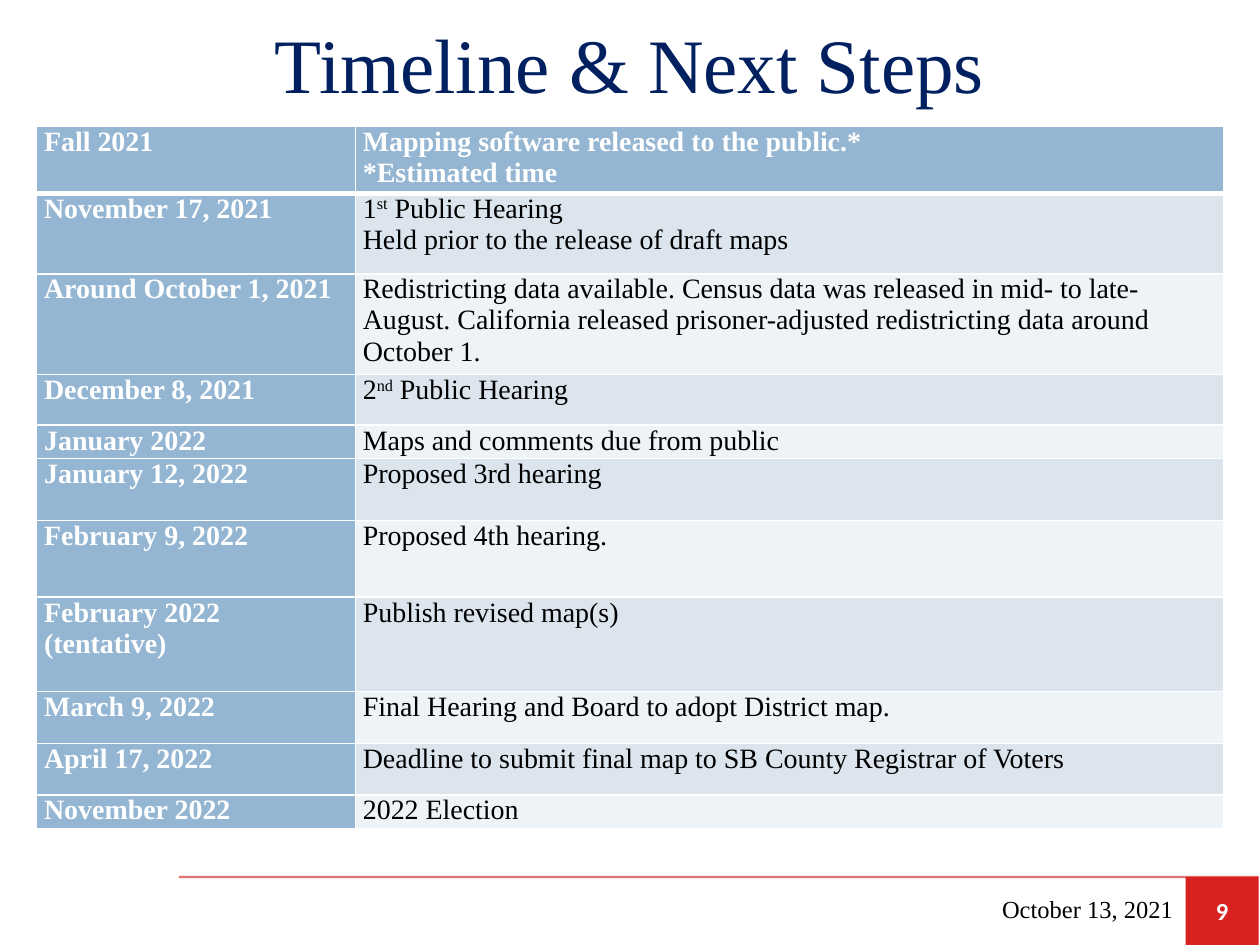
"""Build the redistricting timeline slide."""
from lxml.etree import SubElement
from pptx import Presentation
from pptx.dml.color import RGBColor
from pptx.enum.shapes import MSO_CONNECTOR, MSO_SHAPE
from pptx.enum.text import MSO_ANCHOR, PP_ALIGN
from pptx.oxml import parse_xml
from pptx.oxml.ns import nsdecls, qn
from pptx.util import Inches, Pt

SERIF = "Times New Roman"
WHITE, BLACK, NAVY, RED = "FFFFFF", "000000", "002060", "D92121"
HEADING_FILL = "94B6D2"
BAND_FILLS = ("EEF3F7", "DCE5EE")
COLUMN_WIDTHS = (2.53, 6.89)
TITLE = "Timeline & Next Steps"
MEETING_DATE = "October 13, 2021"
PAGE_NUMBER = "9"
MILESTONES = [
    (0.49, "Fall 2021", "Mapping software released to the public.*\n*Estimated time"),
    (0.64, "November 17, 2021",
     "1^st^ Public Hearing\nHeld prior to the release of draft maps"),
    (0.76, "Around October 1, 2021",
     "Redistricting data available. Census data was released in mid- to "
     "late-August. California released prisoner-adjusted redistricting data "
     "around October 1."),
    (0.4, "December 8, 2021", "2^nd^ Public Hearing"),
    (0.25, "January 2022", "Maps and comments due from public"),
    (0.49, "January 12, 2022", "Proposed 3rd hearing"),
    (0.61, "February 9, 2022", "Proposed 4th hearing."),
    (0.75, "February 2022 (tentative)", "Publish revised map(s)"),
    (0.41, "March 9, 2022", "Final Hearing and Board to adopt District map."),
    (0.41, "April 17, 2022",
     "Deadline to submit final map to SB County Registrar of Voters"),
    (0.25, "November 2022", "2022 Election"),
]


def rgb(color):
    return RGBColor.from_string(color)


def style(run, size, color, bold=False, face=SERIF):
    run.font.size = Pt(size)
    run.font.name = face
    run.font.bold = bold
    run.font.color.rgb = rgb(color)


def write_label(shape, words, align, size, color, bold=False, face=SERIF):
    frame = shape.text_frame
    frame.text = words
    frame.word_wrap = True
    frame.vertical_anchor = MSO_ANCHOR.MIDDLE
    frame.paragraphs[0].alignment = align
    style(frame.paragraphs[0].runs[0], size, color, bold, face)


def add_label(slide, place, *label):
    write_label(slide.shapes.add_textbox(*map(Inches, place)), *label)


def add_footer(slide):
    rule = slide.shapes.add_connector(
        MSO_CONNECTOR.STRAIGHT, Inches(1.42), Inches(6.96), Inches(9.99), Inches(6.96))
    rule.line.width = Pt(1.25)
    rule.line.color.rgb = rgb("C80000")
    properties = rule._element.spPr
    tint = next(properties.iter(qn("a:srgbClr")))
    SubElement(tint, qn("a:alpha"), val="55000")
    SubElement(properties, qn("a:effectLst"))
    badge = slide.shapes.add_shape(
        MSO_SHAPE.RECTANGLE, Inches(9.41), Inches(6.96), Inches(0.58), Inches(0.54))
    badge.shadow.inherit = False
    badge.fill.solid()
    badge.fill.fore_color.rgb = rgb(RED)
    badge.line.fill.background()
    write_label(badge, PAGE_NUMBER, PP_ALIGN.CENTER, 14, WHITE, True, "Calibri")


def set_borders(cell, bottom):
    widths = {"lnL": 1, "lnR": 1, "lnT": 1, "lnB": bottom}
    for position, (side, width) in enumerate(widths.items()):
        border = parse_xml(
            f'<a:{side} {nsdecls("a")} w="{Pt(width)}"><a:solidFill>'
            f'<a:srgbClr val="{WHITE}"/></a:solidFill></a:{side}>')
        cell._tc.get_or_add_tcPr().insert(position, border)


def fill_cell(cell, words, fill, color, bold, bottom):
    cell.margin_left = cell.margin_right = Inches(0.06)
    cell.margin_top = cell.margin_bottom = 0
    cell.fill.solid()
    cell.fill.fore_color.rgb = rgb(fill)
    set_borders(cell, bottom)
    frame = cell.text_frame
    for index, line in enumerate(words.split("\n")):
        paragraph = frame.add_paragraph() if index else frame.paragraphs[0]
        for part, piece in enumerate(line.split("^")):
            run = paragraph.add_run()
            run.text = piece
            style(run, 16, color, bold)
            if part % 2:
                run._r.get_or_add_rPr().set("baseline", "30000")


def add_timeline(slide):
    height = sum(row[0] for row in MILESTONES)
    table = slide.shapes.add_table(
        len(MILESTONES), 2, Inches(0.29), Inches(1),
        Inches(sum(COLUMN_WIDTHS)), Inches(height)).table
    table.horz_banding = False
    for column, width in zip(table.columns, COLUMN_WIDTHS):
        column.width = Inches(width)
    for index, (row_height, *texts) in enumerate(MILESTONES):
        table.rows[index].height = Inches(row_height)
        for column, words in enumerate(texts):
            heading = index == 0 or column == 0
            fill_cell(table.cell(index, column), words,
                      HEADING_FILL if heading else BAND_FILLS[index % 2],
                      WHITE if heading else BLACK, heading, 1 if index else 3)


def main():
    deck = Presentation()
    deck.slide_width, deck.slide_height = Inches(10), Inches(7.5)
    slide = deck.slides.add_slide(deck.slide_layouts[6])
    add_footer(slide)
    add_label(slide, (0, 0, 10, 1), TITLE, PP_ALIGN.CENTER, 44, NAVY)
    add_label(slide, (6.49, 7.01, 2.92, 0.4), MEETING_DATE, PP_ALIGN.RIGHT, 14, BLACK)
    add_timeline(slide)
    deck.save("out.pptx")


if __name__ == "__main__":
    main()
